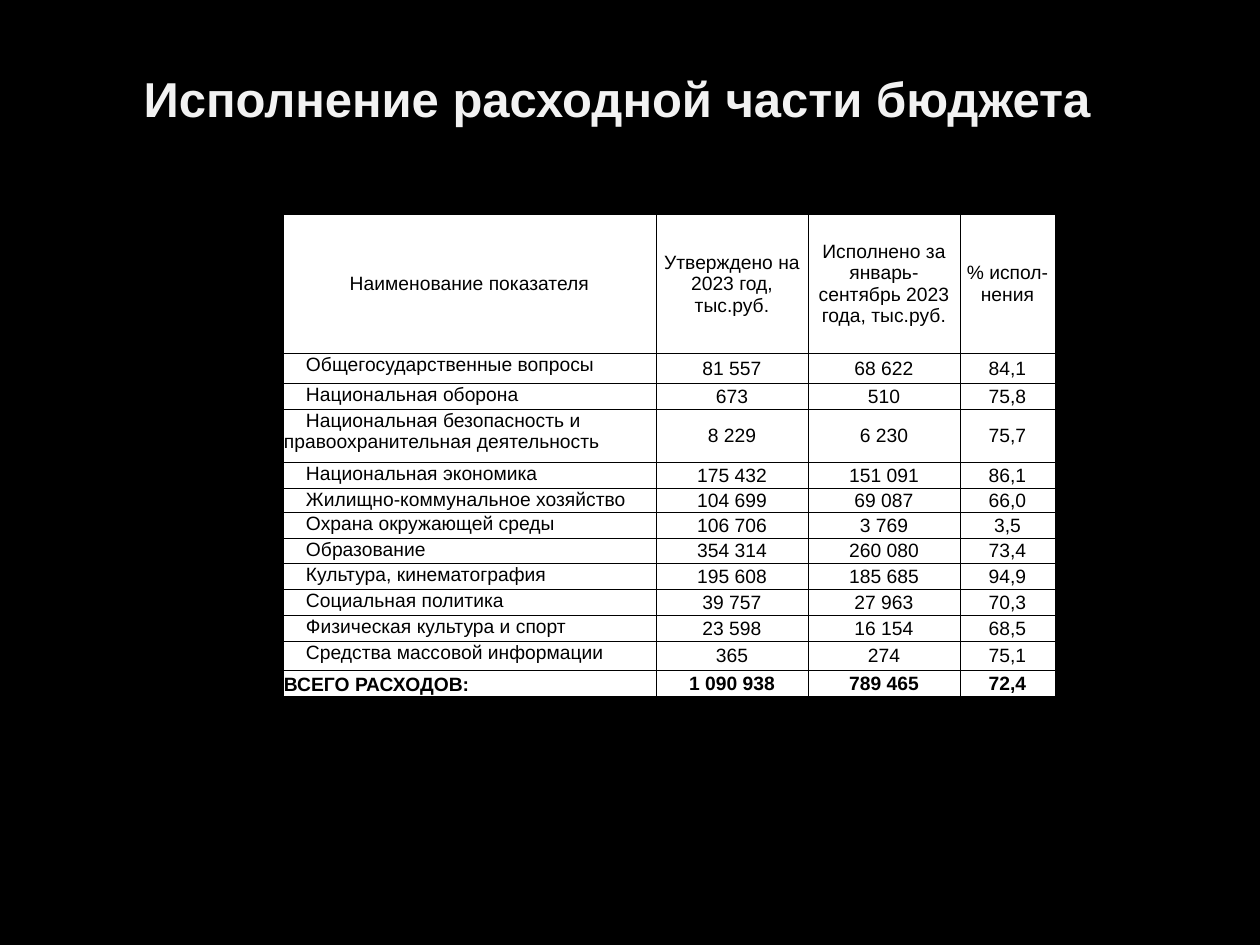
import pptx
import pptx.dml.color
import pptx.enum.text
import pptx.oxml
import pptx.oxml.ns
import pptx.util

PX = pptx.util.Inches(1) // 126
COLORS = {"background": "000000", "title": "F2F2F2", "cell": "FFFFFF", "ink": "000000"}
ALIGN = pptx.enum.text.PP_ALIGN
ANCHOR = pptx.enum.text.MSO_ANCHOR
FIRST_LINE_INDENT = 22

ROWS = [
    ("Наименование показателя", "Утверждено на 2023 год, тыс.руб.",
     "Исполнено за январь-сентябрь 2023 года, тыс.руб.", "% испол-нения"),
    ("Общегосударственные вопросы", "81 557", "68 622", "84,1"),
    ("Национальная оборона", "673", "510", "75,8"),
    ("Национальная безопасность и правоохранительная деятельность",
     "8 229", "6 230", "75,7"),
    ("Национальная экономика", "175 432", "151 091", "86,1"),
    ("Жилищно-коммунальное хозяйство", "104 699", "69 087", "66,0"),
    ("Охрана окружающей среды", "106 706", "3 769", "3,5"),
    ("Образование", "354 314", "260 080", "73,4"),
    ("Культура, кинематография", "195 608", "185 685", "94,9"),
    ("Социальная политика", "39 757", "27 963", "70,3"),
    ("Физическая культура и спорт", "23 598", "16 154", "68,5"),
    ("Средства массовой информации", "365", "274", "75,1"),
    ("ВСЕГО РАСХОДОВ:", "1 090 938", "789 465", "72,4"),
]
COLUMN_WIDTHS = [373, 152, 152, 95]
ROW_HEIGHTS = [139, 30, 26, 53, 26, 24, 26, 25, 26, 26, 26, 29, 26]


def write(para, text, color, **font_format):
    span = para.add_run()
    span.text = text
    span.font.color.rgb = pptx.dml.color.RGBColor.from_string(COLORS[color])
    for name, value in {"name": "Arial", **font_format}.items():
        setattr(span.font, name, value)


def add_borders(cell):
    properties = cell._tc.get_or_add_tcPr()
    for position, side in enumerate(("lnL", "lnR", "lnT", "lnB")):
        properties.insert(position, pptx.oxml.parse_xml(
            f'<a:{side} {pptx.oxml.ns.nsdecls("a")} w="{pptx.util.Pt(0.5)}">'
            f'<a:solidFill><a:srgbClr val="{COLORS["ink"]}"/></a:solidFill></a:{side}>'))


deck = pptx.Presentation()
deck.slide_width, deck.slide_height = 1260 * PX, 945 * PX
page = deck.slides.add_slide(deck.slide_layouts[6])
page.background.fill.solid()
page.background.fill.fore_color.rgb = pptx.dml.color.RGBColor.from_string(COLORS["background"])

title = page.shapes.add_textbox(63 * PX, 37 * PX, 1134 * PX, 121 * PX).text_frame
title_format = {"word_wrap": True, "vertical_anchor": ANCHOR.MIDDLE,
                "margin_left": 13 * PX, "margin_right": 39 * PX}
for name, value in title_format.items():
    setattr(title, name, value)
title.paragraphs[0].alignment = ALIGN.CENTER
write(title.paragraphs[0], "Исполнение расходной части бюджета", "title",
      size=pptx.util.Pt(28), bold=True)

table = page.shapes.add_table(len(ROWS), len(COLUMN_WIDTHS), 283 * PX, 214 * PX,
                              sum(COLUMN_WIDTHS) * PX, sum(ROW_HEIGHTS) * PX).table
table.first_row = table.horz_banding = False
for column, width in zip(table.columns, COLUMN_WIDTHS):
    column.width = width * PX
for row, height in zip(table.rows, ROW_HEIGHTS):
    row.height = height * PX

last = len(ROWS) - 1
for row_index, texts in enumerate(ROWS):
    for column_index, text in enumerate(texts):
        cell = table.cell(row_index, column_index)
        is_label = column_index == 0 and row_index > 0
        anchor = ANCHOR.MIDDLE
        if is_label:
            anchor = ANCHOR.BOTTOM if row_index == last else ANCHOR.TOP
        cell_format = {"margin_left": PX, "margin_right": PX, "margin_top": PX,
                       "margin_bottom": 0, "vertical_anchor": anchor}
        for name, value in cell_format.items():
            setattr(cell, name, value)
        cell.fill.solid()
        cell.fill.fore_color.rgb = pptx.dml.color.RGBColor.from_string(COLORS["cell"])
        add_borders(cell)
        para = cell.text_frame.paragraphs[0]
        para.alignment = ALIGN.LEFT if is_label else ALIGN.CENTER
        if is_label and row_index < last:
            para._p.get_or_add_pPr().set("indent", str(FIRST_LINE_INDENT * PX))
        write(para, text, "ink", size=pptx.util.Pt(11), bold=row_index == last)

deck.save("out.pptx")
